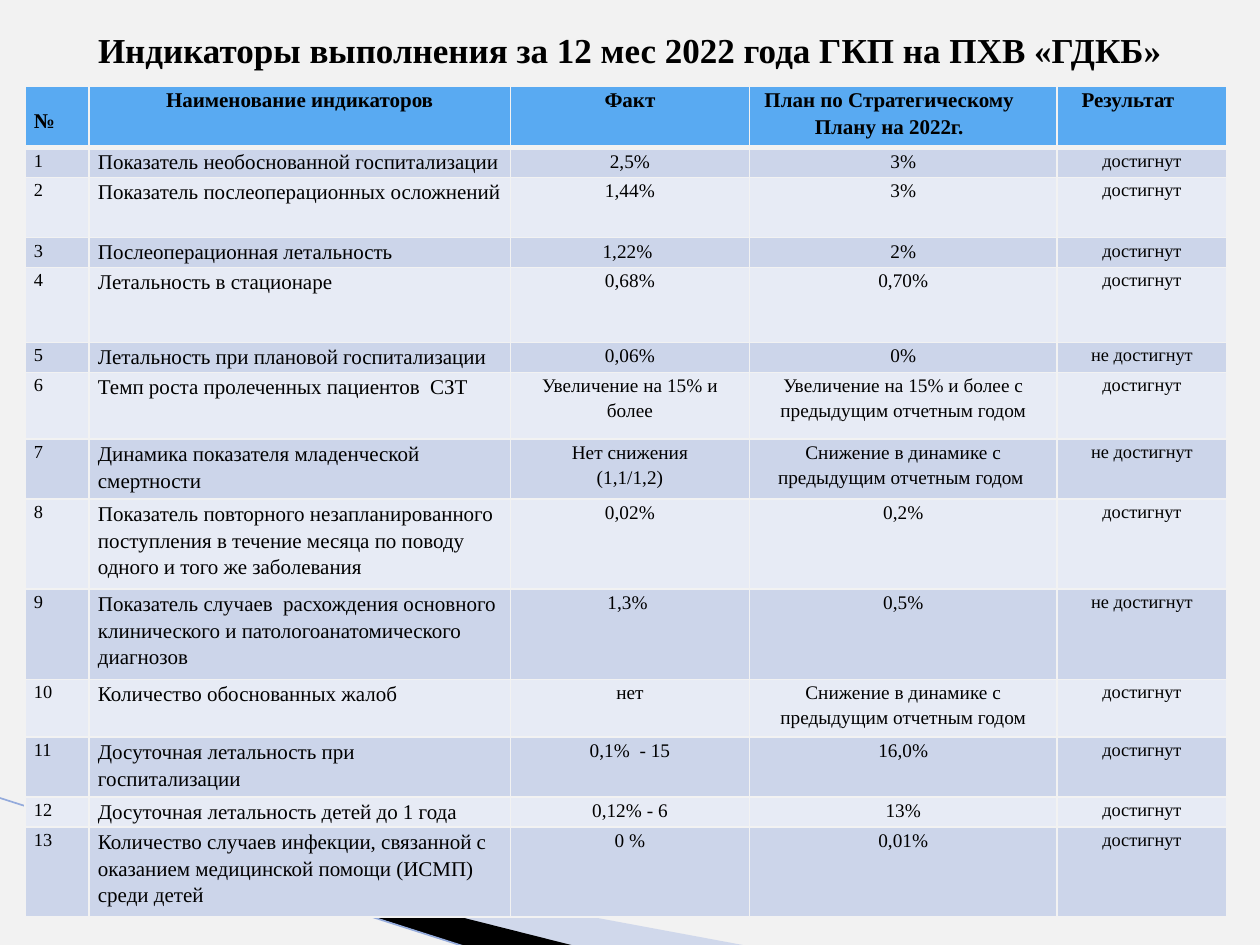
from lxml.etree import SubElement
from pptx import Presentation
from pptx.dml.color import RGBColor
from pptx.enum.shapes import MSO_CONNECTOR
from pptx.enum.text import MSO_ANCHOR, PP_ALIGN
from pptx.oxml.ns import qn
from pptx.util import Pt

HEADERS = [
    "№",
    "Наименование индикаторов",
    "Факт",
    "План по Стратегическому Плану на 2022г.",
    "Результат",
]
YES, NO = "достигнут", "не достигнут"
INDICATORS = [
    ("Показатель необоснованной госпитализации", "2,5%", "3%", YES),
    ("Показатель послеоперационных осложнений", "1,44%", "3%", YES),
    ("Послеоперационная летальность", "1,22% ", "2%", YES),
    ("Летальность в стационаре", "0,68%", "0,70%", YES),
    ("Летальность при плановой госпитализации", "0,06%", "0%", NO),
    ("Темп роста пролеченных пациентов  СЗТ", "Увеличение на 15% и более",
     "Увеличение на 15% и более с предыдущим отчетным годом", YES),
    ("Динамика показателя младенческой смертности", "Нет снижения\n(1,1/1,2)",
     "Снижение в динамике с предыдущим отчетным годом ", NO),
    ("Показатель повторного незапланированного поступления в течение месяца "
     "по поводу одного и того же заболевания", "0,02%", "0,2%", YES),
    ("Показатель случаев  расхождения основного клинического и "
     "патологоанатомического диагнозов", "1,3% ", "0,5%", NO),
    ("Количество обоснованных жалоб", "нет",
     "Снижение в динамике с предыдущим отчетным годом", YES),
    ("Досуточная летальность при госпитализации", "0,1%  - 15", "16,0%", YES),
    ("Досуточная летальность детей до 1 года", "0,12% - 6", "13%", YES),
    ("Количество случаев инфекции, связанной с оказанием медицинской помощи "
     "(ИСМП) среди детей", "0 %", "0,01%", YES),
]
COL_WIDTHS = [36.6, 240.6, 136.8, 175.6, 97.2]
ONE, TWO, THREE = 17.1, 34.3, 51.5
ROW_HEIGHTS = [35.4, ONE, TWO, ONE, 42.8, ONE, 38.2, TWO, THREE, THREE, 33.1, TWO, ONE, THREE]
SIZES = [10.5, 12, 11, 11, 10.5]


def rgb(value):
    return RGBColor.from_string(value)


class Deck:
    font = "Times New Roman"
    text = "000000"
    paper = "F2F2F2"
    header = "59AAF2"
    bands = ("CCD5EA", "E7EBF5")

    def __init__(self, prs):
        self.s = prs.slides.add_slide(prs.slide_layouts[5])
        fill = self.s.background.fill
        fill.solid()
        fill.fore_color.rgb = rgb(self.paper)

    def style(self, p, size, bold=False, align=PP_ALIGN.LEFT):
        p.alignment = align
        f = p.font
        f.name, f.size, f.bold = self.font, Pt(size), bold
        f.color.rgb = rgb(self.text)

    def wedge(self, points, color, alpha=None):
        start, *rest = [(Pt(x), Pt(y)) for x, y in points]
        builder = self.s.shapes.build_freeform(*start)
        builder.add_line_segments(rest, close=True)
        sp = builder.convert_to_shape()
        sp.shadow.inherit = False
        sp.line.fill.background()
        sp.fill.solid()
        sp.fill.fore_color.rgb = rgb(color)
        if alpha:
            clr = next(sp.element.spPr.iter(qn("a:srgbClr")))
            SubElement(clr, qn("a:alpha"), val=str(alpha * 1000))

    def line(self, x1, y1, x2, y2, color, width):
        ln = self.s.shapes.add_connector(MSO_CONNECTOR.STRAIGHT, Pt(x1), Pt(y1), Pt(x2), Pt(y2))
        ln.line.color.rgb = rgb(color)
        ln.line.width = Pt(width)
        SubElement(ln.element.spPr, qn("a:effectLst"))

    def title(self, text, x, y, w, h):
        sp = self.s.shapes.title
        sp.left, sp.top, sp.width, sp.height = Pt(x), Pt(y), Pt(w), Pt(h)
        tf = sp.text_frame
        tf.text = text
        tf.word_wrap = True
        tf.vertical_anchor = MSO_ANCHOR.TOP
        tf.margin_top = Pt(7)
        self.style(tf.paragraphs[0], 20, True, PP_ALIGN.CENTER)
        sp.element.getparent().append(sp.element)

    def borders(self, cell, bottom):
        tc_pr = cell._tc.get_or_add_tcPr()
        for side, width in zip("LRTB", (1, 1, 1, bottom)):
            ln = SubElement(tc_pr, qn(f"a:ln{side}"), w=str(Pt(width)))
            SubElement(SubElement(ln, qn("a:solidFill")), qn("a:srgbClr"), val=self.paper)

    def cell(self, cell, text, size, fill, bold, align, bottom=1):
        self.borders(cell, bottom)
        cell.fill.solid()
        cell.fill.fore_color.rgb = rgb(fill)
        cell.margin_left = cell.margin_right = Pt(5)
        cell.margin_top = cell.margin_bottom = 0
        cell.text = text
        for p in cell.text_frame.paragraphs:
            self.style(p, size, bold, align)
            p.line_spacing = 1.15

    def table(self, x, y, headers, rows):
        frame = self.s.shapes.add_table(len(rows) + 1, len(headers), Pt(x), Pt(y),
                                        Pt(sum(COL_WIDTHS)), Pt(sum(ROW_HEIGHTS)))
        table = frame.table
        for col, width in zip(table.columns, COL_WIDTHS):
            col.width = Pt(width)
        for row, height in zip(table.rows, ROW_HEIGHTS):
            row.height = Pt(height)
        for c, text in enumerate(headers):
            align = PP_ALIGN.CENTER if c else PP_ALIGN.LEFT
            self.cell(table.cell(0, c), text, 12, self.header, True, align, 3)
        for r, values in enumerate(rows, 1):
            for c, text in enumerate((str(r), *values)):
                align = PP_ALIGN.CENTER if c > 1 else PP_ALIGN.LEFT
                self.cell(table.cell(r, c), text, SIZES[c], self.bands[(r - 1) % 2], False, align)
        table.cell(0, 0).margin_top = Pt(12)
        for c in (3, 4):
            table.cell(0, c).margin_right = Pt(21)


def main():
    prs = Presentation()
    prs.slide_width, prs.slide_height = Pt(720), Pt(540)
    deck = Deck(prs)
    deck.wedge([(39.6, 468.5), (428.4, 540.7), (328.3, 540.7), (39.6, 468)], "9DB2E1", 40)
    deck.wedge([(38.2, 467.3), (329, 540.7), (267.8, 541.4), (38.9, 468)], "000000")
    deck.line(-0.7, 455.8, 267.1, 541.4, "94ABDC", 0.95)
    deck.table(14.4, 49, HEADERS, INDICATORS)
    deck.title("Индикаторы выполнения за 12 мес 2022 года ГКП на ПХВ «ГДКБ»", 36, 9.4, 648, 67.7)
    prs.save("out.pptx")


if __name__ == "__main__":
    main()
